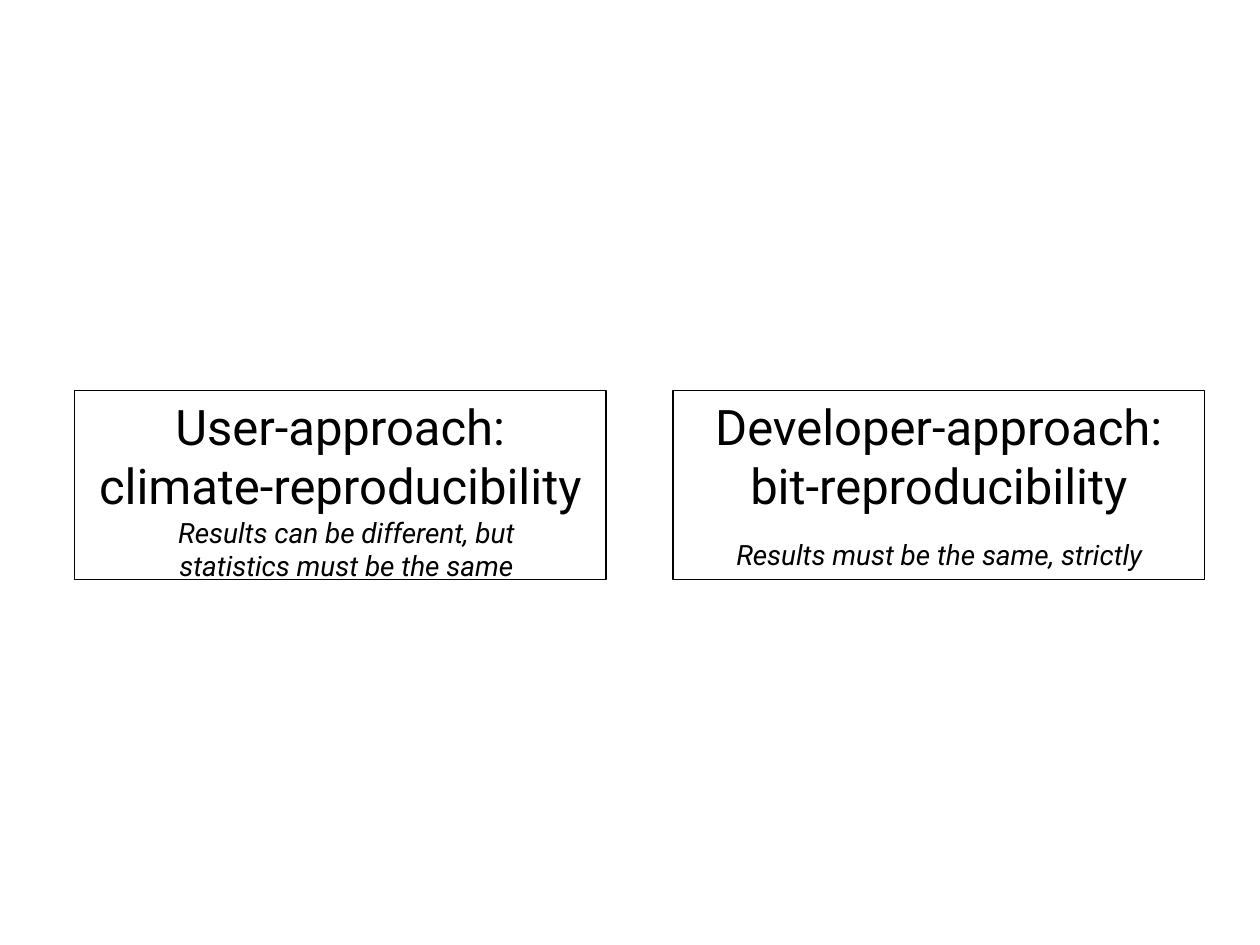
from dataclasses import dataclass

from pptx import Presentation
from pptx.dml.color import RGBColor
from pptx.enum.shapes import MSO_SHAPE
from pptx.enum.text import MSO_ANCHOR, PP_ALIGN
from pptx.shapes.autoshape import Shape
from pptx.slide import Slide
from pptx.util import Inches, Pt

COLORS = {"ink": "000000"}
HEADING_FORMAT = {"name": "Roboto", "size": Pt(28)}
NOTE_FORMAT = {"name": "Roboto", "size": Pt(16), "italic": True}

BOX_TOP, BOX_WIDTH, BOX_HEIGHT = 3.1, 4.22, 1.5
NOTE_HEIGHT = 0.7


@dataclass
class Approach:
    heading: str
    box_left: float
    note: str
    note_left: float
    note_top: float
    note_width: float


APPROACHES = [
    Approach("User-approach: climate-reproducibility", 0.59,
             "Results can be different, but statistics must be the same",
             0.98, 4.04, 3.54),
    Approach("Developer-approach: bit-reproducibility", 5.34,
             "Results must be the same, strictly",
             5.31, 4.22, 4.29),
]


def write_text(shape: Shape, text: str, font_format: dict) -> None:
    """Write one centred paragraph from the top of the shape."""
    frame = shape.text_frame
    frame.word_wrap = True
    frame.vertical_anchor = MSO_ANCHOR.TOP
    paragraph = frame.paragraphs[0]
    paragraph.alignment = PP_ALIGN.CENTER
    run = paragraph.add_run()
    run.text = text
    for attribute, value in font_format.items():
        setattr(run.font, attribute, value)
    run.font.color.rgb = RGBColor.from_string(COLORS["ink"])


def draw_box(slide: Slide, approach: Approach) -> None:
    box = slide.shapes.add_shape(
        MSO_SHAPE.RECTANGLE, Inches(approach.box_left), Inches(BOX_TOP),
        Inches(BOX_WIDTH), Inches(BOX_HEIGHT))
    box.shadow.inherit = False
    box.fill.background()
    box.line.color.rgb = RGBColor.from_string(COLORS["ink"])
    box.line.width = Pt(0.75)
    write_text(box, approach.heading, HEADING_FORMAT)


def draw_note(slide: Slide, approach: Approach) -> None:
    note = slide.shapes.add_textbox(
        Inches(approach.note_left), Inches(approach.note_top),
        Inches(approach.note_width), Inches(NOTE_HEIGHT))
    write_text(note, approach.note, NOTE_FORMAT)


def main() -> None:
    presentation = Presentation()
    presentation.slide_width = Inches(10)
    presentation.slide_height = Inches(7.5)
    slide = presentation.slides.add_slide(presentation.slide_layouts[6])

    # Framed headings, then the notes over them
    for draw in (draw_box, draw_note):
        for approach in APPROACHES:
            draw(slide, approach)

    presentation.save("out.pptx")


if __name__ == "__main__":
    main()
